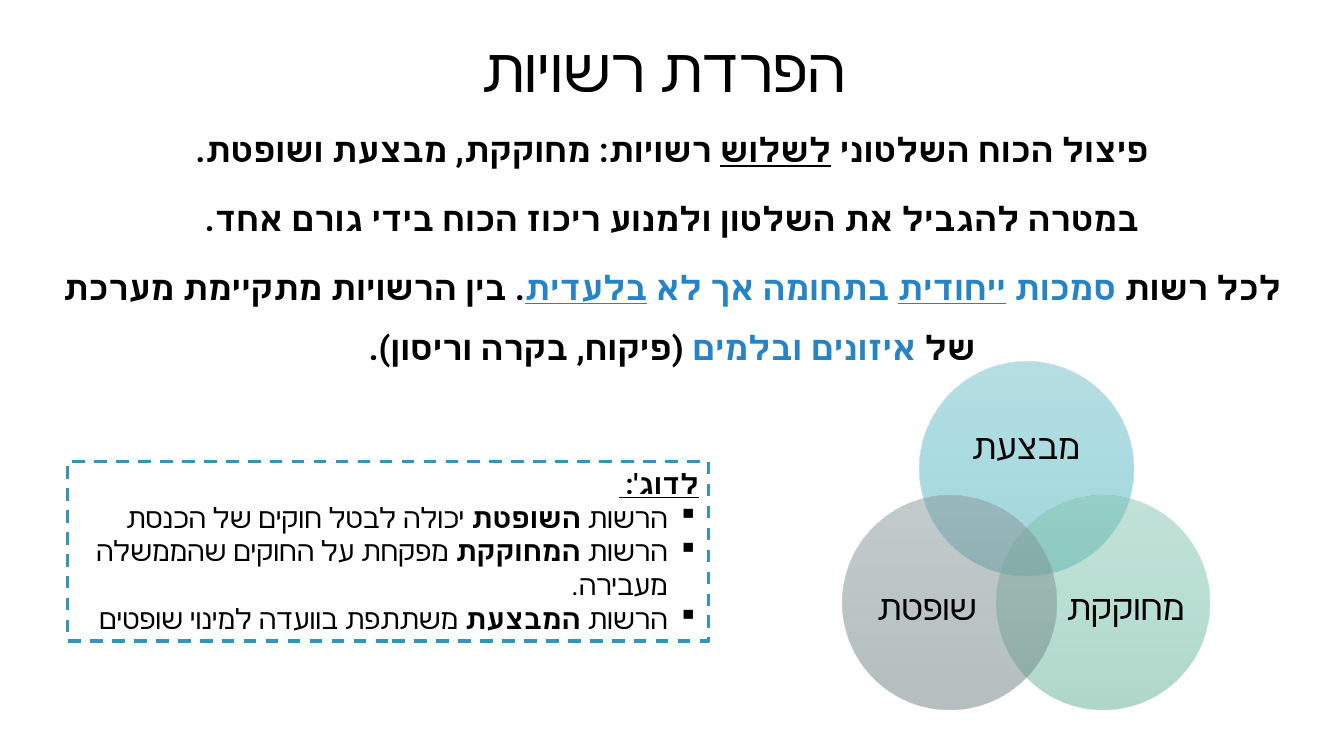
from dataclasses import dataclass
from typing import Any

from lxml import etree
from pptx import Presentation
from pptx.dml.color import RGBColor
from pptx.enum.dml import MSO_LINE
from pptx.enum.shapes import MSO_SHAPE
from pptx.enum.text import MSO_ANCHOR, MSO_AUTO_SIZE, PP_ALIGN
from pptx.oxml.ns import qn
from pptx.util import Inches, Pt

CENTER, RIGHT = PP_ALIGN.CENTER, PP_ALIGN.RIGHT
TOP, MIDDLE = MSO_ANCHOR.TOP, MSO_ANCHOR.MIDDLE
NO_FIT, GROW = MSO_AUTO_SIZE.NONE, MSO_AUTO_SIZE.SHAPE_TO_FIT_TEXT
OVAL, RECT = MSO_SHAPE.OVAL, MSO_SHAPE.RECTANGLE
DASH = MSO_LINE.DASH

BLACK = RGBColor(0x00, 0x00, 0x00)
WHITE = RGBColor(0xFF, 0xFF, 0xFF)
BLUE = RGBColor(0x26, 0x83, 0xC6)
TEAL = RGBColor(0x34, 0x94, 0xBA)
FONT = "Roboto"
DIAMETER = 2.12


@dataclass
class Span:
    text: str
    bold: bool = False
    underline: bool = False
    color: RGBColor = BLACK


@dataclass
class Branch:
    name: str
    circle: tuple[float, float]
    label: tuple[float, float, float, float]
    stops: tuple[str, str, str]


BODY = [
    [Span("פיצול הכוח השלטוני ", True), Span("לשלוש", True, True),
     Span(" רשויות: מחוקקת, מבצעת ושופטת.", True)],
    [Span("במטרה להגביל את השלטון ולמנוע ריכוז הכוח בידי גורם אחד.", True)],
    [Span("לכל רשות ", True), Span("סמכות ", True, color=BLUE),
     Span("ייחודית", True, True, BLUE), Span(" בתחומה אך לא ", True, color=BLUE),
     Span("בלעדית", True, True, BLUE),
     Span(". בין הרשויות מתקיימת מערכת של ", True),
     Span("איזונים ובלמים ", True, color=BLUE),
     Span("(פיקוח, בקרה וריסון).", True)],
]
EXAMPLES = [
    ("השופטת", " יכולה לבטל חוקים של הכנסת"),
    ("המחוקקת", " מפקחת על החוקים שהממשלה מעבירה."),
    ("המבצעת", " משתתפת בוועדה למינוי שופטים"),
]
BRANCHES = [
    Branch("מבצעת", (9.12, 3.59), (9.4, 3.97, 1.55, 0.95), ("6FBEC7", "53BAC5", "44AAB5")),
    Branch("מחוקקת", (9.88, 4.92), (10.53, 5.46, 1.27, 1.16), ("86C5B1", "71C1A8", "61AF97")),
    Branch("שופטת", (8.36, 4.92), (8.56, 5.46, 1.27, 1.16), ("89999A", "798D8F", "6A7E80")),
]


def apply(target: Any, values: dict[str, Any]) -> None:
    for name, value in values.items():
        setattr(target, name, value)


def write(tf: Any, paragraphs: list[list[Span]], size: float,
          values: dict[str, Any], rtl: bool = True) -> None:
    tf.word_wrap = True
    for i, spans in enumerate(paragraphs):
        p = tf.add_paragraph() if i else tf.paragraphs[0]
        apply(p, values)
        if rtl:
            p._p.get_or_add_pPr().set("rtl", "1")
        for span in spans:
            r = p.add_run()
            r.text = span.text
            apply(r.font, {"name": FONT, "size": Pt(size), "bold": span.bold,
                           "underline": span.underline})
            r.font.color.rgb = span.color
            etree.SubElement(r._r.get_or_add_rPr(), qn("a:cs"), typeface=FONT)


def add_bullet(p: Any) -> None:
    pPr = p._p.get_or_add_pPr()
    indent = Inches(0.31)
    pPr.set("marL", str(indent))
    pPr.set("indent", str(-indent))
    etree.SubElement(pPr, qn("a:buChar"), char="▪")


def fill_gradient(sp: Any, stops: tuple[str, str, str]) -> None:
    sp.fill.gradient()
    sp.fill.gradient_angle = 270
    gs_list = sp._element.spPr.find(".//" + qn("a:gsLst"))
    for gs in list(gs_list):
        gs_list.remove(gs)
    for i, color in enumerate(stops):
        gs = etree.SubElement(gs_list, qn("a:gs"), pos=str(i * 50000))
        rgb = etree.SubElement(gs, qn("a:srgbClr"), val=color)
        etree.SubElement(rgb, qn("a:alpha"), val="50000")


def add_title(s: Any) -> None:
    sp = s.shapes.title
    apply(sp, {"left": Inches(3.96), "top": Inches(0.34),
               "width": Inches(5.26), "height": Inches(1.42)})
    tf = sp.text_frame
    apply(tf, {"vertical_anchor": TOP, "auto_size": NO_FIT})
    write(tf, [[Span("הפרדת רשויות")]], 44,
          {"alignment": CENTER, "line_spacing": 0.9, "space_after": Pt(6)}, rtl=False)


def add_body(s: Any) -> None:
    sp = s.shapes.add_textbox(Inches(0.34), Inches(0.15), Inches(12.65), Inches(4.42))
    sp.text_frame.vertical_anchor = MIDDLE
    write(sp.text_frame, BODY, 24,
          {"alignment": CENTER, "line_spacing": 1.5, "space_after": Pt(6)})


def add_branch(shapes: Any, branch: Branch) -> None:
    left, top = branch.circle
    sp = shapes.add_shape(OVAL, Inches(left), Inches(top), Inches(DIAMETER), Inches(DIAMETER))
    sp.shadow.inherit = False
    sp.line.fill.background()
    fill_gradient(sp, branch.stops)
    tf = shapes.add_textbox(*map(Inches, branch.label)).text_frame
    apply(tf, {"vertical_anchor": MIDDLE, "margin_left": 0, "margin_top": 0,
               "margin_right": 0, "margin_bottom": 0})
    write(tf, [[Span(branch.name)]], 25, {"alignment": CENTER, "line_spacing": 0.9})


def add_examples(s: Any) -> None:
    sp = s.shapes.add_shape(RECT, Inches(0.67), Inches(4.58), Inches(6.36), Inches(1.78))
    sp.shadow.inherit = False
    sp.fill.solid()
    sp.fill.fore_color.rgb = WHITE
    sp.line.color.rgb = TEAL
    apply(sp.line, {"width": Pt(2.25), "dash_style": DASH})
    tf = sp.text_frame
    apply(tf, {"vertical_anchor": TOP, "auto_size": GROW})
    rows = [[Span("הרשות "), Span(name, True), Span(action)] for name, action in EXAMPLES]
    write(tf, [[Span("לדוג': ", True, True)], *rows], 20, {"alignment": RIGHT})
    for p in tf.paragraphs[1:]:
        add_bullet(p)


def main() -> None:
    prs = Presentation()
    apply(prs, {"slide_width": Inches(13.33), "slide_height": Inches(7.5)})
    s = prs.slides.add_slide(prs.slide_layouts[5])
    add_title(s)
    add_body(s)
    venn = s.shapes.add_group_shape()
    for branch in BRANCHES:
        add_branch(venn.shapes, branch)
    add_examples(s)
    prs.save("out.pptx")


if __name__ == "__main__":
    main()
